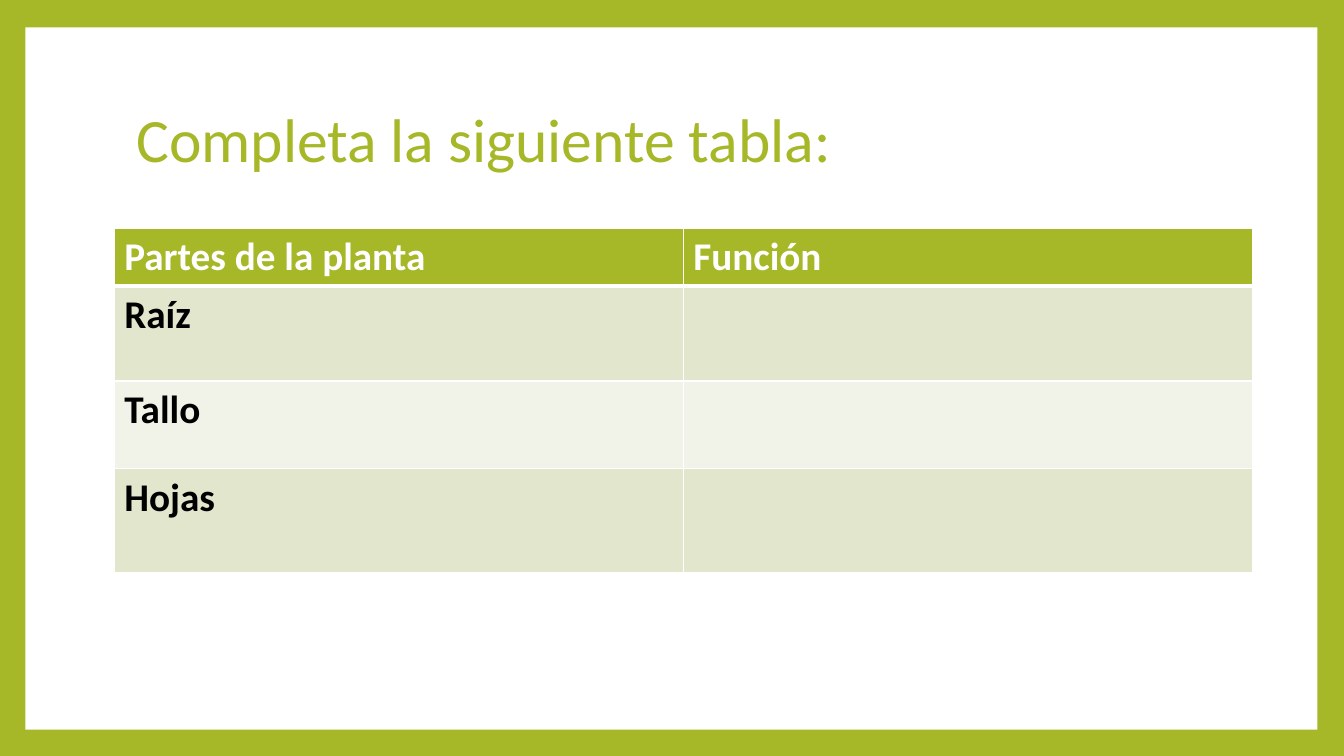
from lxml.etree import SubElement
from pptx import Presentation
from pptx.dml.color import RGBColor
from pptx.enum.shapes import MSO_SHAPE as Shape
from pptx.enum.text import MSO_ANCHOR as Anchor, PP_ALIGN as Align
from pptx.oxml.ns import qn
from pptx.util import Cm, Pt

GREEN = RGBColor(0xA6, 0xB7, 0x27)
WHITE = RGBColor(0xFF, 0xFF, 0xFF)
BLACK = RGBColor(0x00, 0x00, 0x00)
BAND_DARK = RGBColor(0xE1, 0xE6, 0xCD)
BAND_LIGHT = RGBColor(0xF1, 0xF3, 0xE8)

PLANT_ROWS = [
    ("Partes de la planta", "Función"),
    ("Raíz", ""),
    ("Tallo", ""),
    ("Hojas", ""),
]
ROW_HEIGHTS = [1.45, 2.39, 2.21, 2.62]


class PlantSlide:
    font_name = "Calibri"

    def __init__(self, deck):
        self.slide = deck.slides.add_slide(deck.slide_layouts[5])
        background = self.slide.background.fill
        background.solid()
        background.fore_color.rgb = GREEN

    def style_text(self, paragraph, color, **formats):
        for name, value in {"name": self.font_name, **formats}.items():
            setattr(paragraph.font, name, value)
        paragraph.font.color.rgb = color

    def add_panel(self, left, top, width, height):
        panel = self.slide.shapes.add_shape(
            Shape.RECTANGLE, Cm(left), Cm(top), Cm(width), Cm(height))
        panel.shadow.inherit = False
        panel.fill.solid()
        panel.fill.fore_color.rgb = WHITE
        panel.line.fill.background()
        self.slide.shapes.element.insert(2, panel.element)

    def add_title(self, text, **box):
        title = self.slide.shapes.title
        for side, length in box.items():
            setattr(title, side, Cm(length))
        title.text_frame.text = text
        title.text_frame.vertical_anchor = Anchor.MIDDLE
        heading = title.text_frame.paragraphs[0]
        heading.alignment = Align.LEFT
        heading.line_spacing = 0.9
        self.style_text(heading, GREEN, size=Pt(44))

    def add_border(self, cell, side, points):
        border = SubElement(cell._tc.get_or_add_tcPr(), qn(f"a:ln{side}"), w=str(Pt(points)))
        fill = SubElement(border, qn("a:solidFill"))
        SubElement(fill, qn("a:srgbClr"), val=str(WHITE))

    def add_table(self, rows, heights, left, top, width):
        table = self.slide.shapes.add_table(
            len(rows), len(rows[0]), Cm(left), Cm(top), Cm(width), Cm(sum(heights))).table
        for r, (texts, height) in enumerate(zip(rows, heights)):
            table.rows[r].height = Cm(height)
            band = BAND_DARK if r % 2 else BAND_LIGHT
            for c, text in enumerate(texts):
                cell = table.cell(r, c)
                for side in "LRTB":
                    thick = (r, side) in ((0, "B"), (1, "T"))
                    self.add_border(cell, side, 3 if thick else 1)
                cell.fill.solid()
                cell.fill.fore_color.rgb = band if r else GREEN
                cell.text = text
                self.style_text(cell.text_frame.paragraphs[0], BLACK if r else WHITE,
                                size=Pt(28), bold=True)


def main():
    deck = Presentation()
    deck.slide_width, deck.slide_height = Cm(33.87), Cm(19.05)
    page = PlantSlide(deck)
    page.add_panel(0.64, 0.69, 32.56, 17.7)
    page.add_title("Completa la siguiente tabla:", left=3.18, top=1.7, width=27.43, height=3.76)
    page.add_table(PLANT_ROWS, ROW_HEIGHTS, 2.88, 5.75, 28.68)
    deck.save("out.pptx")


if __name__ == "__main__":
    main()
